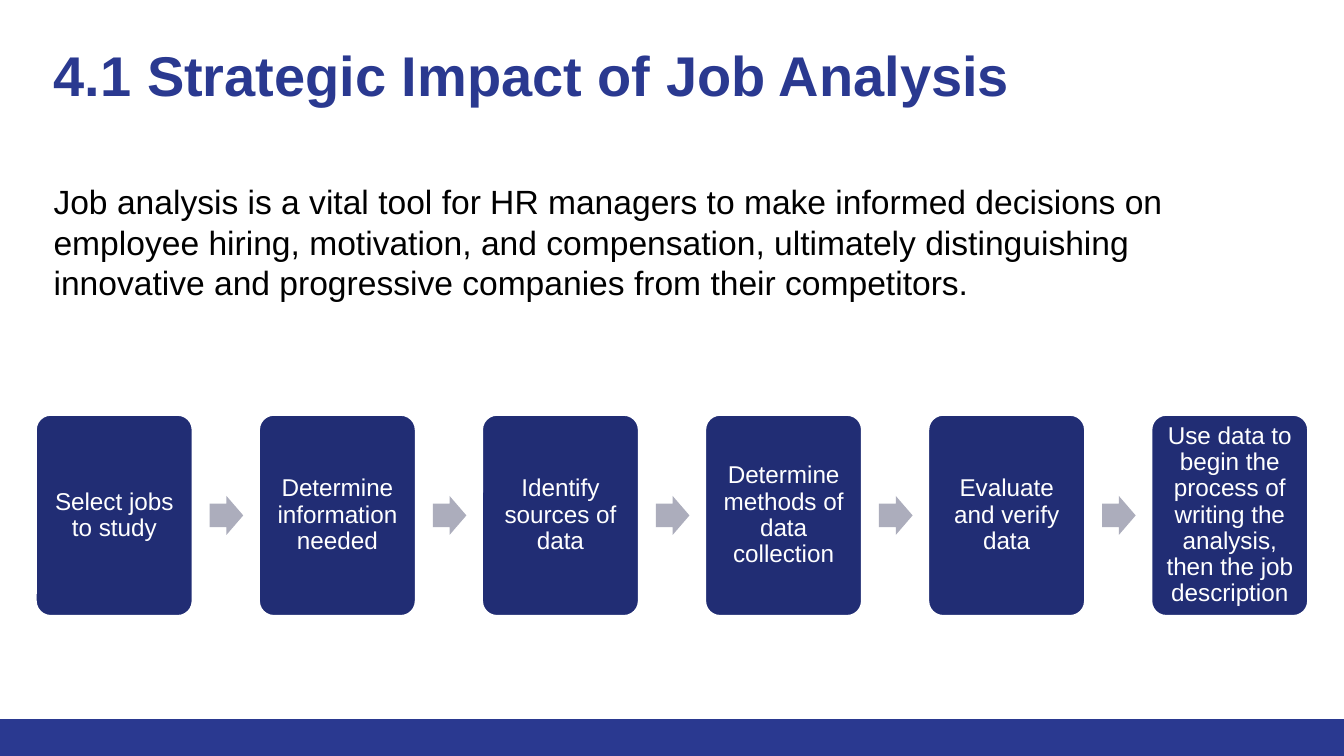
from pptx import Presentation
from pptx.dml.color import RGBColor
from pptx.enum.shapes import MSO_SHAPE as Shape
from pptx.enum.text import MSO_ANCHOR as Anchor, PP_ALIGN as Align
from pptx.util import Inches, Pt

# Content
TITLE = "4.1 Strategic Impact of Job Analysis"
BODY = ("Job analysis is a vital tool for HR managers to make informed decisions on "
        "employee hiring, motivation, and compensation, ultimately distinguishing "
        "innovative and progressive companies from their competitors.")
STEPS = [
    "Select jobs to study",
    "Determine information needed",
    "Identify sources of data",
    "Determine methods of data collection",
    "Evaluate and verify data",
    "Use data to begin the process of writing the analysis, then the job description",
]

# Style and layout, in inches
BLUE, NAVY, GREY, WHITE, BLACK = "2A3990", "212D74", "ACADBC", "FFFFFF", "000000"
PAGE_W = 10
PAGE_H = PAGE_W * 9 / 16
BAND_TOP = 5.35
FLOW_LEFT, FLOW_RIGHT, FLOW_TOP = 0.26, 9.74, 3.08
STEP_W, STEP_H = 1.18, 1.51
ARROW_W, ARROW_H, ARROW_GAP = 0.25, 0.29, 0.12


def color(value):
    return RGBColor.from_string(value)


def write(shape, text, size, ink, inset, bold=False, anchor=Anchor.TOP, align=Align.LEFT):
    frame = shape.text_frame
    frame.word_wrap = True
    frame.vertical_anchor = anchor
    frame.margin_left = frame.margin_right = Inches(inset[0])
    frame.margin_top = frame.margin_bottom = Inches(inset[1])
    frame.text = text
    para = frame.paragraphs[0]
    para.alignment = align
    font = para.runs[0].font
    font.name, font.size, font.bold = "Arial", Pt(size), bold
    font.color.rgb = color(ink)
    return para


def add_block(page, kind, left, top, width, height, fill, outline=None):
    block = page.shapes.add_shape(kind, Inches(left), Inches(top), Inches(width), Inches(height))
    block.shadow.inherit = False
    block.fill.solid()
    block.fill.fore_color.rgb = color(fill)
    if outline:
        block.line.color.rgb = color(outline)
        block.line.width = Pt(2)
    else:
        block.line.fill.background()
    return block


deck = Presentation()
deck.slide_width, deck.slide_height = Inches(PAGE_W), Inches(PAGE_H)
page = deck.slides.add_slide(deck.slide_layouts[5])

# Bottom band
add_block(page, Shape.RECTANGLE, 0, BAND_TOP, PAGE_W, PAGE_H - BAND_TOP, BLUE)

# Title
title = page.shapes.title
title.left, title.top, title.width, title.height = map(Inches, (0.3, 0.2, 9.32, 0.66))
write(title, TITLE, 30, BLUE, (0.1, 0.1), bold=True)

# Introduction
intro = page.shapes.add_textbox(Inches(0.3), Inches(1.3), Inches(9.38), Inches(1.01))
write(intro, BODY, 18, BLACK, (0.1, 0.05))

# Process steps, with an arrow after each but the last
pitch = (FLOW_RIGHT - FLOW_LEFT - STEP_W) / (len(STEPS) - 1)
for index, label in enumerate(STEPS):
    left = FLOW_LEFT + index * pitch
    step = add_block(page, Shape.ROUNDED_RECTANGLE, left, FLOW_TOP, STEP_W, STEP_H, NAVY, WHITE)
    step.adjustments[0] = 0.1
    para = write(step, label, 13, WHITE, (0.05, 0.05), anchor=Anchor.MIDDLE, align=Align.CENTER)
    para.line_spacing = 0.9
    if index < len(STEPS) - 1:
        arrow = add_block(page, Shape.RIGHT_ARROW, left + STEP_W + ARROW_GAP,
                          FLOW_TOP + (STEP_H - ARROW_H) / 2, ARROW_W, ARROW_H, GREY)
        arrow.adjustments[0], arrow.adjustments[1] = 0.6, 0.5

deck.save("out.pptx")
